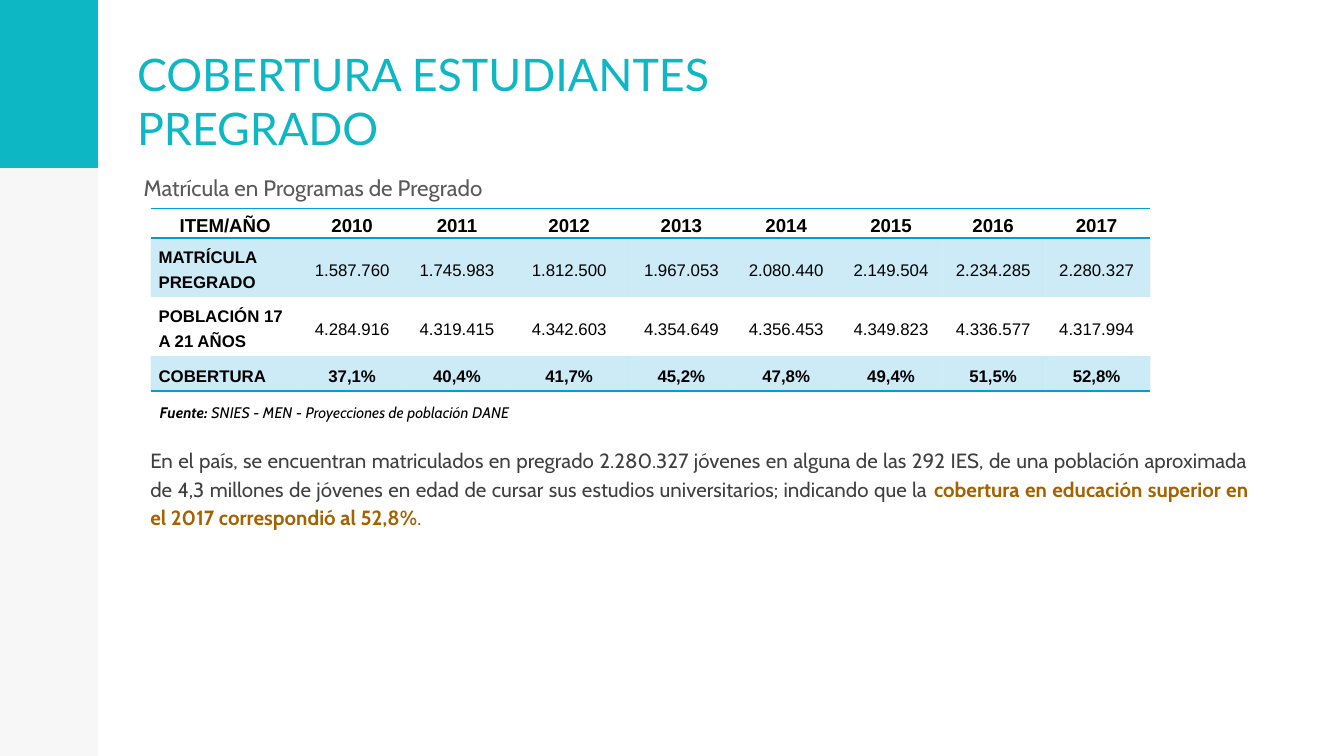
from lxml.etree import SubElement
from pptx import Presentation
from pptx.dml.color import RGBColor
from pptx.enum.shapes import MSO_SHAPE
from pptx.enum.text import MSO_ANCHOR, MSO_AUTO_SIZE, PP_ALIGN
from pptx.oxml import parse_xml
from pptx.oxml.ns import nsdecls, qn
from pptx.util import Inches, Pt

COLORS = {
    "teal": "0DB7C4", "blue": "009DD9", "black": "000000",
    "gray": "595959", "dark": "404040", "brown": "A46200",
}


def add_run(paragraph, text, font, size, color, bold=False, italic=False):
    run = paragraph.add_run()
    run.text = text
    run.font.name = font
    run.font.size = Pt(size)
    run.font.bold = bold
    run.font.italic = italic
    run.font.color.rgb = RGBColor.from_string(COLORS[color])


def set_fill(fill, color, opacity=100):
    fill.solid()
    fill.fore_color.rgb = RGBColor.from_string(COLORS[color])
    if opacity < 100:
        color_element = fill._xPr.find(qn("a:solidFill"))[0]
        SubElement(color_element, qn("a:alpha"), val=str(opacity * 1000))


presentation = Presentation()
presentation.slide_width = Inches(10)
presentation.slide_height = Inches(10 * 9 / 16)
slide = presentation.slides.add_slide(presentation.slide_layouts[5])

for height, color, opacity in [
    (presentation.slide_height, "black", 3),
    (Inches(1.25), "teal", 100),
]:
    band = slide.shapes.add_shape(MSO_SHAPE.RECTANGLE, 0, 0, Inches(0.73), height)
    band.shadow.inherit = False
    band.line.fill.background()
    set_fill(band.fill, color, opacity)

title = slide.shapes.title
title.left, title.top, title.width, title.height = map(Inches, (0.92, 0, 4.58, 1.25))
title_frame = title.text_frame
title_frame.word_wrap = True
title_frame.auto_size = MSO_AUTO_SIZE.NONE
title_frame.vertical_anchor = MSO_ANCHOR.BOTTOM
title_frame.margin_left = title_frame.margin_right = Inches(0.1)
title_frame.margin_top = title_frame.margin_bottom = Inches(0.1)
paragraph = title_frame.paragraphs[0]
paragraph.alignment = PP_ALIGN.LEFT
add_run(paragraph, "COBERTURA ESTUDIANTES PREGRADO", "Lato", 24, "teal")

subtitle = slide.shapes.add_textbox(Inches(0.56), Inches(1.25), Inches(3.17), Inches(0.3))
subtitle.text_frame.word_wrap = False
subtitle.text_frame.auto_size = MSO_AUTO_SIZE.SHAPE_TO_FIT_TEXT
paragraph = subtitle.text_frame.paragraphs[0]
paragraph.level = 3
properties = paragraph._p.get_or_add_pPr()
properties.set("marL", str(Inches(0.41)))
properties.set("indent", "0")
add_run(paragraph, "Matrícula en Programas de Pregrado", "Cabin", 12, "gray")

rows = [
    ["ITEM/AÑO", "2010", "2011", "2012", "2013", "2014", "2015", "2016", "2017"],
    ["MATRÍCULA PREGRADO", "1.587.760", "1.745.983", "1.812.500", "1.967.053",
     "2.080.440", "2.149.504", "2.234.285", "2.280.327"],
    ["POBLACIÓN 17 A 21 AÑOS", "4.284.916", "4.319.415", "4.342.603", "4.354.649",
     "4.356.453", "4.349.823", "4.336.577", "4.317.994"],
    ["COBERTURA", "37,1%", "40,4%", "41,7%", "45,2%", "47,8%", "49,4%", "51,5%", "52,8%"],
]
column_widths = [1.11, 0.78, 0.78, 0.89, 0.78, 0.78, 0.78, 0.74, 0.8]
row_heights = [0.22, 0.44, 0.44, 0.26]
row_borders = {0: ["lnT", "lnB"], 3: ["lnB"]}
NO_STYLE = "{2D5ABB26-0587-4C30-8999-92F81FD0307C}"

table = slide.shapes.add_table(
    len(rows), len(column_widths), Inches(1.12), Inches(1.55), Inches(7.44), Inches(1.36)
).table
table.first_row = False
table.horz_banding = False
table._tbl.tblPr.find(qn("a:tableStyleId")).text = NO_STYLE
for column, width in zip(table.columns, column_widths):
    column.width = Inches(width)

for row_index, values in enumerate(rows):
    table.rows[row_index].height = Inches(row_heights[row_index])
    for column_index, value in enumerate(values):
        cell = table.cell(row_index, column_index)
        cell.vertical_anchor = MSO_ANCHOR.MIDDLE
        cell.margin_left = cell.margin_right = Inches(0.06)
        cell.margin_top = cell.margin_bottom = 0
        if row_index in (1, 3):
            set_fill(cell.fill, "blue", 20)
        else:
            cell.fill.background()
        for position, side in enumerate(row_borders.get(row_index, [])):
            border = parse_xml(
                f'<a:{side} {nsdecls("a")} w="{Pt(1)}"><a:solidFill>'
                f'<a:srgbClr val="{COLORS["blue"]}"/></a:solidFill></a:{side}>'
            )
            cell._tc.get_or_add_tcPr().insert(position, border)
        paragraph = cell.text_frame.paragraphs[0]
        paragraph.line_spacing = 1.3
        is_label = column_index == 0 and row_index > 0
        paragraph.alignment = PP_ALIGN.LEFT if is_label else PP_ALIGN.CENTER
        add_run(paragraph, value, "Arial", 10 if row_index == 0 else 9, "black",
                bold=is_label or row_index in (0, 3))

source_runs = [
    ("Fuente: ", 8.25, "black", True, True),
    ("SNIES - MEN - Proyecciones de población DANE", 8.25, "black", False, True),
]
summary_runs = [
    ("En el país, se encuentran matriculados en pregrado 2.280.327 jóvenes en alguna de las "
     "292 IES, de una población aproximada de 4,3 millones de jóvenes en edad de cursar sus "
     "estudios universitarios; indicando que la ", 11, "dark", False, False),
    ("cobertura en educación superior en el 2017 correspondió al 52,8%",
     11, "brown", True, False),
    (".", 8, "brown", True, False),
]
for box, space_after, runs in [
    ((1.09, 2.93, 3.75, 0.26), 0, source_runs),
    ((1.02, 3.26, 8.37, 0.74), 6, summary_runs),
]:
    text_box = slide.shapes.add_textbox(*map(Inches, box))
    text_box.text_frame.word_wrap = True
    text_box.text_frame.auto_size = MSO_AUTO_SIZE.SHAPE_TO_FIT_TEXT
    paragraph = text_box.text_frame.paragraphs[0]
    paragraph.alignment = PP_ALIGN.JUSTIFY
    paragraph.line_spacing = 1.15
    paragraph.space_after = Pt(space_after)
    for text, size, color, bold, italic in runs:
        add_run(paragraph, text, "Cabin", size, color, bold, italic)

presentation.save("out.pptx")
